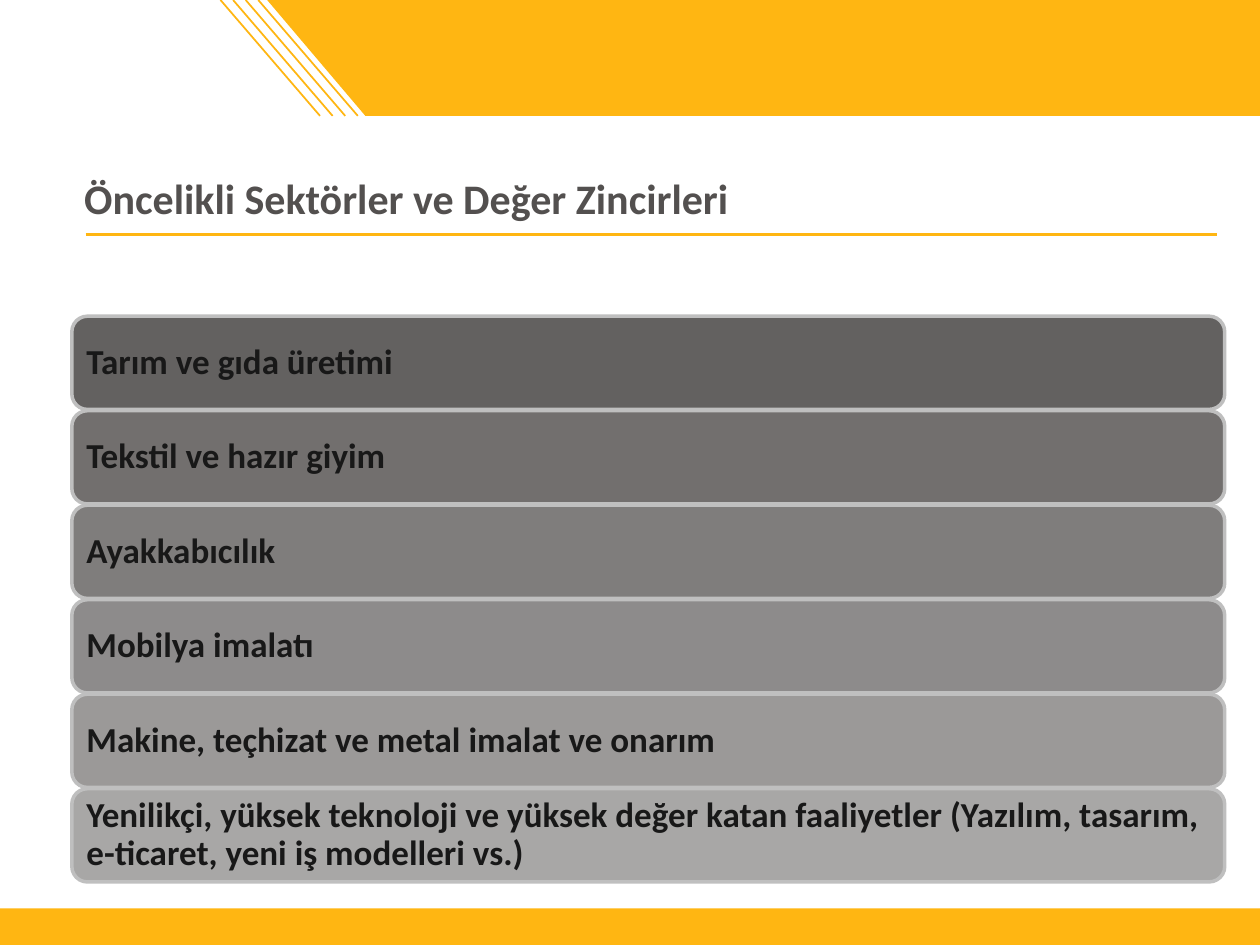
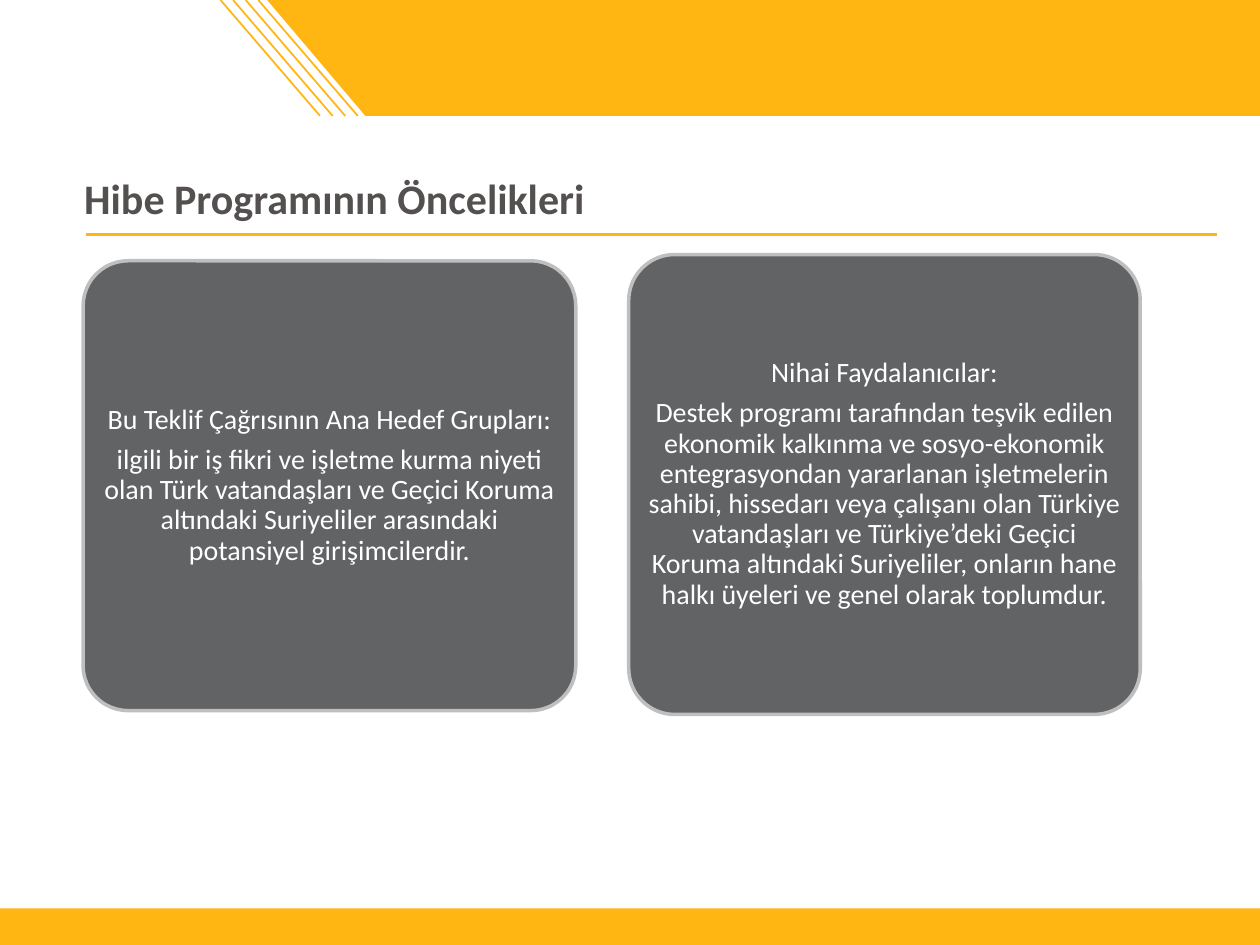
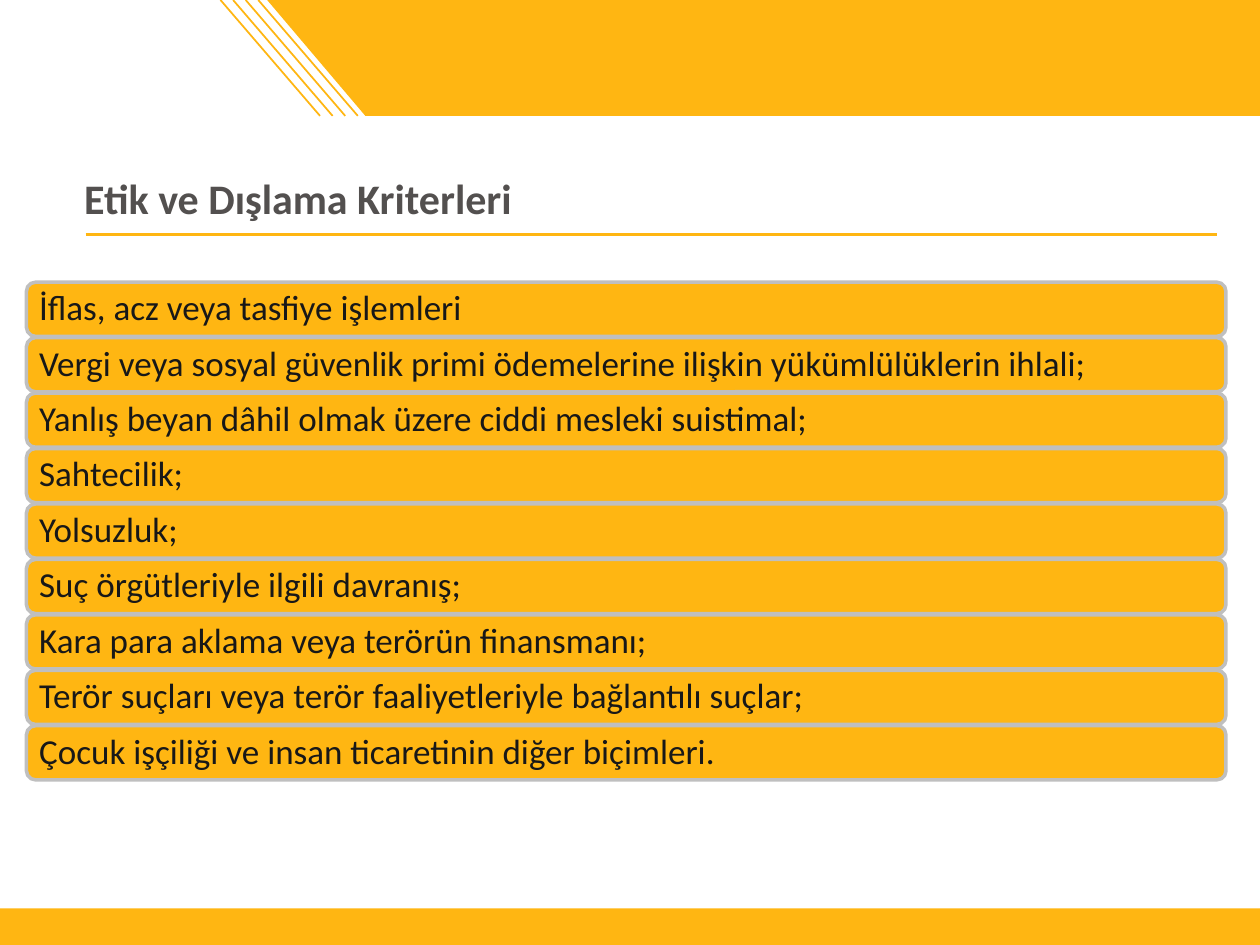
from lxml import etree
from pptx import Presentation
from pptx.dml.color import RGBColor
from pptx.enum.shapes import MSO_CONNECTOR, MSO_SHAPE
from pptx.enum.text import MSO_ANCHOR, PP_ALIGN
from pptx.oxml.ns import qn
from pptx.util import Inches, Pt

RECT, ROUND = MSO_SHAPE.RECTANGLE, MSO_SHAPE.ROUNDED_RECTANGLE
STRAIGHT = MSO_CONNECTOR.STRAIGHT
MIDDLE, BOTTOM = MSO_ANCHOR.MIDDLE, MSO_ANCHOR.BOTTOM
LEFT, CENTER = PP_ALIGN.LEFT, PP_ALIGN.CENTER

YELLOW, BROWN, SLATE, SILVER, INK, WHITE = (
    "FFB612", "53504F", "616365", "BFBFBF", "181818", "FFFFFF")

TITLE = {"name": "Calibri", "size": Pt(24), "bold": True}
SECTOR = {"name": "Calibri", "size": Pt(20), "bold": True}
CRITERION = {"name": "Calibri", "size": Pt(20), "bold": False}
GROUP = {"name": "Calibri", "size": Pt(16), "bold": False}

titles = ["Öncelikli Sektörler ve Değer Zincirleri",
          "Hibe Programının Öncelikleri",
          "Etik ve Dışlama Kriterleri"]

sectors = ["Tarım ve gıda üretimi",
           "Tekstil ve hazır giyim",
           "Ayakkabıcılık",
           "Mobilya imalatı",
           "Makine, teçhizat ve metal imalat ve onarım",
           "Yenilikçi, yüksek teknoloji ve yüksek değer katan faaliyetler "
           "(Yazılım, tasarım, e-ticaret, yeni iş modelleri vs.)"]

groups = [
    ((0.66, 2.07, 3.91, 3.57),
     ["Bu Teklif Çağrısının Ana Hedef Grupları:",
      "ilgili bir iş fikri ve işletme kurma niyeti olan Türk vatandaşları ve "
      "Geçici Koruma altındaki Suriyeliler arasındaki potansiyel girişimcilerdir."]),
    ((4.99, 2.02, 4.06, 3.65),
     ["Nihai Faydalanıcılar:",
      "Destek programı tarafından teşvik edilen ekonomik kalkınma ve sosyo-ekonomik "
      "entegrasyondan yararlanan işletmelerin sahibi, hissedarı veya çalışanı olan "
      "Türkiye vatandaşları ve Türkiye’deki Geçici Koruma altındaki Suriyeliler, "
      "onların hane halkı üyeleri ve genel olarak toplumdur."]),
]

criteria = ["İflas, acz veya tasfiye işlemleri",
            "Vergi veya sosyal güvenlik primi ödemelerine ilişkin yükümlülüklerin ihlali;",
            "Yanlış beyan dâhil olmak üzere ciddi mesleki suistimal;",
            "Sahtecilik;",
            "Yolsuzluk;",
            "Suç örgütleriyle ilgili davranış;",
            "Kara para aklama veya terörün finansmanı;",
            "Terör suçları veya terör faaliyetleriyle bağlantılı suçlar;",
            "Çocuk işçiliği ve insan ticaretinin diğer biçimleri."]


def paint(color_format, color):
    color_format.rgb = RGBColor.from_string(color)


def add_box(s, box, fill, texts, fmt, color, align, inset):
    sp = s.shapes.add_shape(ROUND, *[Inches(v) for v in box])
    sp.shadow.inherit = False
    sp.fill.solid()
    paint(sp.fill.fore_color, fill)
    paint(sp.line.color, SILVER)
    sp.line.width = Pt(2)
    tf = sp.text_frame
    tf.word_wrap = True
    tf.vertical_anchor = MIDDLE
    tf.margin_left = tf.margin_right = Inches(inset[0])
    tf.margin_top = tf.margin_bottom = Inches(inset[1])
    for i, text in enumerate(texts):
        p = tf.paragraphs[0] if i == 0 else tf.add_paragraph()
        p.alignment = align
        p.line_spacing = 0.9
        if i:
            p.space_before = Pt(5.6)
        r = p.add_run()
        r.text = text
        for key, value in fmt.items():
            setattr(r.font, key, value)
        paint(r.font.color, color)
    return sp


prs = Presentation()
prs.slide_width, prs.slide_height = Inches(10), Inches(7.5)

rules = [(0.68, 1.86, 9.66, 1.86, 1.5)]
rules += [(1.75 + 0.1 * i, 0, 2.54 + 0.1 * i, 0.92, 1) for i in range(4)]

for title in titles:
    s = prs.slides.add_slide(prs.slide_layouts[6])
    fb = s.shapes.build_freeform(Inches(2.12), 0)
    fb.add_line_segments([(Inches(x), Inches(y)) for x, y in
                          [(10, 0), (10, 0.92), (2.9, 0.92)]])
    band = fb.convert_to_shape()
    footer = s.shapes.add_shape(RECT, 0, Inches(7.21), Inches(10), Inches(0.29))
    for sp in (band, footer):
        sp.shadow.inherit = False
        sp.fill.solid()
        paint(sp.fill.fore_color, YELLOW)
        sp.line.fill.background()
    for x1, y1, x2, y2, width in rules:
        line = s.shapes.add_connector(
            STRAIGHT, Inches(x1), Inches(y1), Inches(x2), Inches(y2))
        paint(line.line.color, YELLOW)
        line.line.width = Pt(width)
        etree.SubElement(line._element.spPr, qn("a:effectLst"))
    tf = s.shapes.add_textbox(
        Inches(0.57), Inches(0.99), Inches(9.15), Inches(0.83)).text_frame
    tf.word_wrap = True
    tf.vertical_anchor = BOTTOM
    r = tf.paragraphs[0].add_run()
    r.text = title
    for key, value in TITLE.items():
        setattr(r.font, key, value)
    paint(r.font.color, BROWN)

sector_slide, group_slide, criteria_slide = prs.slides

for i, sector in enumerate(sectors):
    sp = add_box(sector_slide, (0.57, 2.51 + 0.75 * i, 9.15, 0.74), BROWN,
                 [sector], SECTOR, INK, LEFT, (0.08, 0.08))
    clr = sp._element.spPr.find(qn("a:solidFill"))[0]
    etree.SubElement(clr, qn("a:alpha"), val=str((90 - 8 * i) * 1000))

for box, texts in groups:
    sp = add_box(group_slide, box, SLATE, texts, GROUP, WHITE, CENTER, (0.03, 0.02))
    sp.adjustments[0] = 0.1

for i, criterion in enumerate(criteria):
    add_box(criteria_slide, (0.21, 2.24 + 0.44 * i, 9.52, 0.43), YELLOW,
            [criterion], CRITERION, INK, LEFT, (0.08, 0.08))

prs.save("out.pptx")
